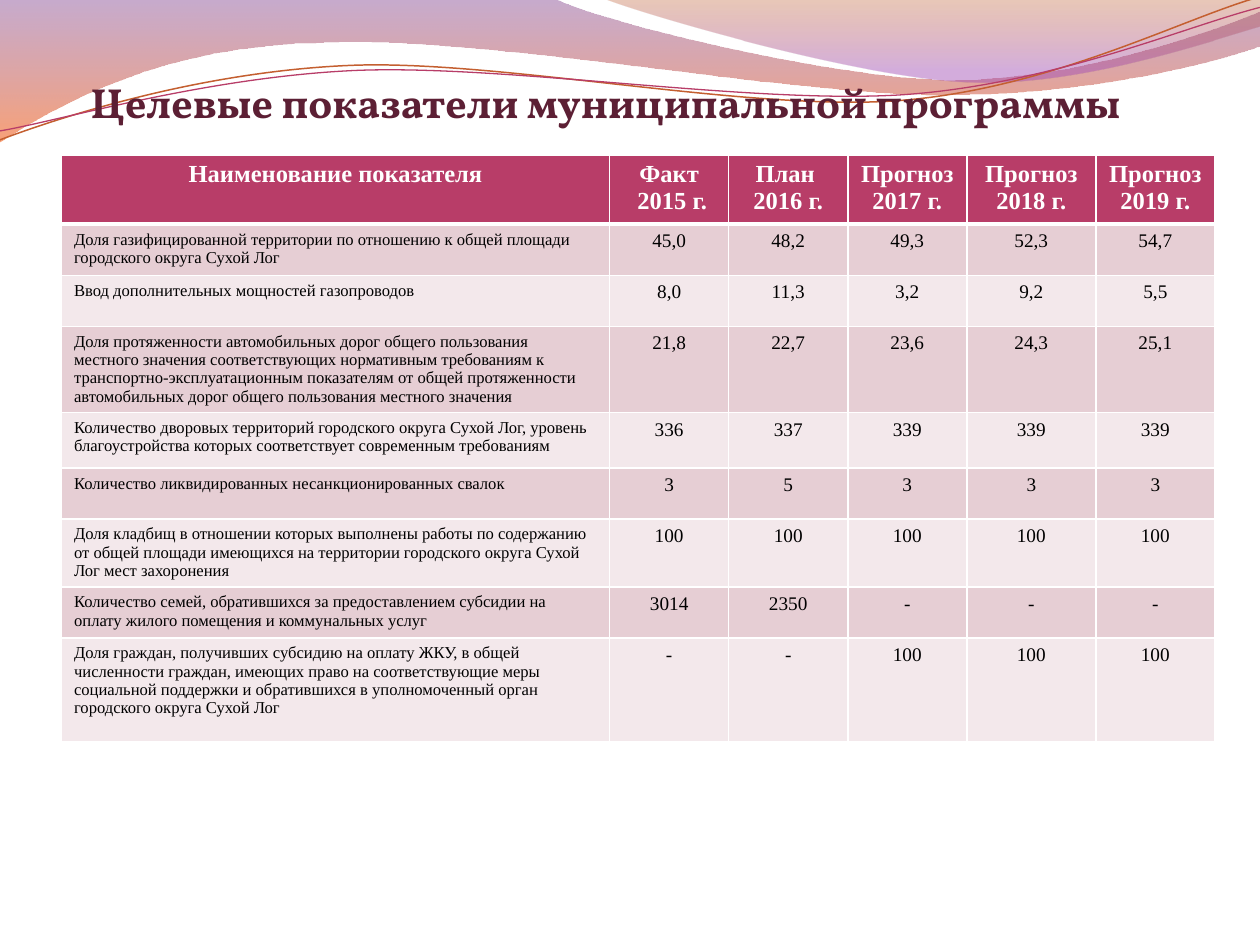
from lxml.etree import SubElement
from pptx import Presentation
from pptx.dml.color import RGBColor
from pptx.enum.text import MSO_ANCHOR, PP_ALIGN
from pptx.oxml.ns import qn
from pptx.util import Cm, Pt

WHITE = RGBColor(0xFF, 0xFF, 0xFF)
BLACK = RGBColor(0x00, 0x00, 0x00)
CRIMSON = RGBColor(0xB8, 0x3D, 0x68)
DARK_WINE = RGBColor(0x5C, 0x1F, 0x34)
ROSE = RGBColor(0xE6, 0xCE, 0xD4)
PALE_ROSE = RGBColor(0xF3, 0xE8, 0xEB)
PURPLE = RGBColor(0x83, 0x45, 0x91)
ORANGE = RGBColor(0xF3, 0x53, 0x07)
RUST = RGBColor(0xB7, 0x49, 0x15)
VIOLET = RGBColor(0xA1, 0x4B, 0xB4)
COPPER = RGBColor(0xC4, 0x5F, 0x30)

TITLE = "Целевые показатели муниципальной программы"
HEADERS = ["Наименование показателя", "Факт\n 2015 г.", "План \n2016 г.",
           "Прогноз 2017 г.", "Прогноз 2018 г.", "Прогноз 2019 г."]
INDICATORS = [
    ("Доля газифицированной территории по отношению к общей площади "
     "городского округа Сухой Лог", "45,0", "48,2", "49,3", "52,3", "54,7"),
    ("Ввод дополнительных мощностей газопроводов",
     "8,0", "11,3", "3,2", "9,2", "5,5"),
    ("Доля протяженности автомобильных дорог общего пользования местного "
     "значения соответствующих нормативным требованиям к "
     "транспортно-эксплуатационным показателям от общей протяженности "
     "автомобильных дорог общего пользования местного значения",
     "21,8", "22,7", "23,6", "24,3", "25,1"),
    ("Количество дворовых территорий городского округа Сухой Лог, уровень "
     "благоустройства которых соответствует современным требованиям",
     "336", "337", "339", "339", "339"),
    ("Количество ликвидированных несанкционированных свалок",
     "3", "5", "3", "3", "3"),
    ("Доля кладбищ в отношении которых выполнены работы по содержанию от "
     "общей площади имеющихся на территории городского округа Сухой Лог мест "
     "захоронения", "100", "100", "100", "100", "100"),
    ("Количество семей, обратившихся за предоставлением субсидии на оплату "
     "жилого помещения и коммунальных услуг", "3014", "2350", "-", "-", "-"),
    ("Доля граждан, получивших субсидию на оплату ЖКУ, в общей численности "
     "граждан, имеющих право на соответствующие меры социальной поддержки и "
     "обратившихся в уполномоченный орган городского округа Сухой Лог",
     "-", "-", "100", "100", "100"),
]
COLUMN_WIDTHS = [11.05, 2.4, 2.4, 2.4, 2.6, 2.4]
ROW_HEIGHTS = [1.4, 1.03, 1.03, 1.74, 1.12, 1.02, 1.37, 1.03, 2.09]

# Outlines in cm: a start point, then (x, y) lines or six-number Bezier curves.
WIDE_BAND = [(0, -0.03), (11.18, -0.03),
             (12.09, 0.43, 16.87, 1.6, 19.25, 1.6),
             (21.67, 1.6, 24.33, 0.66, 25.4, 0.23), (25.43, 0.91),
             (24.97, 1.12, 22.1, 1.93, 18.95, 1.91),
             (15.8, 1.91, 9.7, 0.71, 6.53, 0.86),
             (3.28, 0.89, 1.17, 2.11, -0.03, 2.87)]
RIGHT_BAND = [(12.17, -0.03),
              (12.93, 0.28, 17.32, 1.57, 19.53, 1.65),
              (21.74, 1.75, 24.41, 0.81, 25.4, 0.53), (25.4, 0)]
COPPER_WAVE = [(0, 2.82),
               (1.22, 2.36, 4.01, 1.45, 7.04, 1.32),
               (10.03, 1.19, 15.06, 2.26, 18.11, 2.03),
               (21.16, 1.8, 23.83, 0.38, 25.35, -0.05)]
CRIMSON_WAVE = [(0, 2.64),
                (1.19, 2.44, 4.17, 1.55, 7.19, 1.42),
                (10.24, 1.3, 15.16, 2.11, 18.21, 1.91),
                (21.23, 1.7, 23.9, 0.53, 25.4, 0.15)]


def add_outline(page, left, top, outline, close):
    """Build a freeform through all points, then join triples into curves."""
    points = [(left + Cm(x), top + Cm(y)) for segment in outline
              for x, y in zip(segment[::2], segment[1::2])]
    builder = page.shapes.build_freeform(*points[0])
    builder.add_line_segments(points[1:], close=close)
    shape = builder.convert_to_shape()
    shape.shadow.inherit = False
    lines = iter(list(shape.element.iter(qn("a:lnTo"))))
    for segment in outline[1:]:
        line = next(lines)
        if len(segment) == 6:
            line.tag = qn("a:cubicBezTo")
            for _ in range(2):
                extra = next(lines)
                line.append(extra[0])
                extra.getparent().remove(extra)
    return shape


def add_band(page, left, top, outline, stops):
    """Add a borderless band; stops are (position, colour, opacity percent)."""
    band = add_outline(page, left, top, outline, close=True)
    band.line.fill.background()
    band.fill.gradient()
    band.fill.gradient_angle = 270
    for stop, (position, colour, _) in zip(band.fill.gradient_stops, stops):
        stop.position = position
        stop.color.rgb = colour
    for element, (_, _, opacity) in zip(
            band.element.spPr.iter(qn("a:srgbClr")), stops):
        SubElement(element, qn("a:alpha"), val=str(opacity * 1000))


def add_wave(page, left, top, outline, colour, width):
    wave = add_outline(page, left, top, outline, close=False)
    wave.fill.background()
    wave.line.color.rgb = colour
    wave.line.width = Pt(width)


def add_wave_header(page, left, top):
    add_band(page, left, top, WIDE_BAND, [(0, PURPLE, 45), (1, ORANGE, 55)])
    add_band(page, left, top, RIGHT_BAND, [(0, RUST, 30), (0.8, VIOLET, 45)])
    add_wave(page, left, top, COPPER_WAVE, COPPER, 0.85)
    add_wave(page, left, top, CRIMSON_WAVE, CRIMSON, 0.75)


def style_text(para, font_name, size, colour, bold, align):
    para.alignment = align
    for span in para.runs:
        span.font.name = font_name
        span.font.size = Pt(size)
        span.font.bold = bold
        span.font.color.rgb = colour


def add_title(page, left, top, width, height):
    frame = page.shapes.add_textbox(left, top, width, height).text_frame
    frame.word_wrap = True
    frame.vertical_anchor = MSO_ANCHOR.BOTTOM
    frame.margin_left = frame.margin_right = frame.margin_bottom = 0
    frame.text = TITLE
    style_text(frame.paragraphs[0], "Vollkorn", 24, DARK_WINE, True,
               PP_ALIGN.CENTER)


def set_borders(cell, **widths):
    properties = cell._tc.get_or_add_tcPr()
    for side in "LRTB":
        line = SubElement(properties, qn(f"a:ln{side}"),
                          w=str(Pt(widths.get(side, 1))))
        fill = SubElement(line, qn("a:solidFill"))
        SubElement(fill, qn("a:srgbClr"), val=str(WHITE))


def add_indicator_table(page, left, top):
    rows = [HEADERS, *INDICATORS]
    table = page.shapes.add_table(
        len(rows), len(HEADERS), left, top,
        Cm(sum(COLUMN_WIDTHS)), Cm(sum(ROW_HEIGHTS))).table
    for column, width in zip(table.columns, COLUMN_WIDTHS):
        column.width = Cm(width)
    for index, (row, height, texts) in enumerate(
            zip(table.rows, ROW_HEIGHTS, rows)):
        row.height = Cm(height)
        is_header = index == 0
        row_fill = CRIMSON if is_header else (ROSE if index % 2 else PALE_ROSE)
        for position, (cell, text) in enumerate(zip(row.cells, texts)):
            is_name = position == 0 and not is_header
            size = 14 if is_header else 9.5 if is_name else 11
            align = PP_ALIGN.LEFT if is_name else PP_ALIGN.CENTER
            set_borders(cell, T=3 if index == 1 else 1, B=3 if is_header else 1)
            cell.fill.solid()
            cell.fill.fore_color.rgb = row_fill
            cell.margin_bottom = 0
            cell.text_frame.text = text
            for para in cell.text_frame.paragraphs:
                style_text(para, "Times New Roman", size,
                           WHITE if is_header else BLACK, is_header, align)


def main():
    deck = Presentation()
    deck.slide_width, deck.slide_height = Cm(25.4), Cm(19.05)
    page = deck.slides.add_slide(deck.slide_layouts[6])
    add_wave_header(page, Cm(0), Cm(0))
    add_title(page, Cm(1.5), Cm(1.58), Cm(21.41), Cm(0.97))
    add_indicator_table(page, Cm(1.24), Cm(3.12))
    deck.save("out.pptx")


if __name__ == "__main__":
    main()
